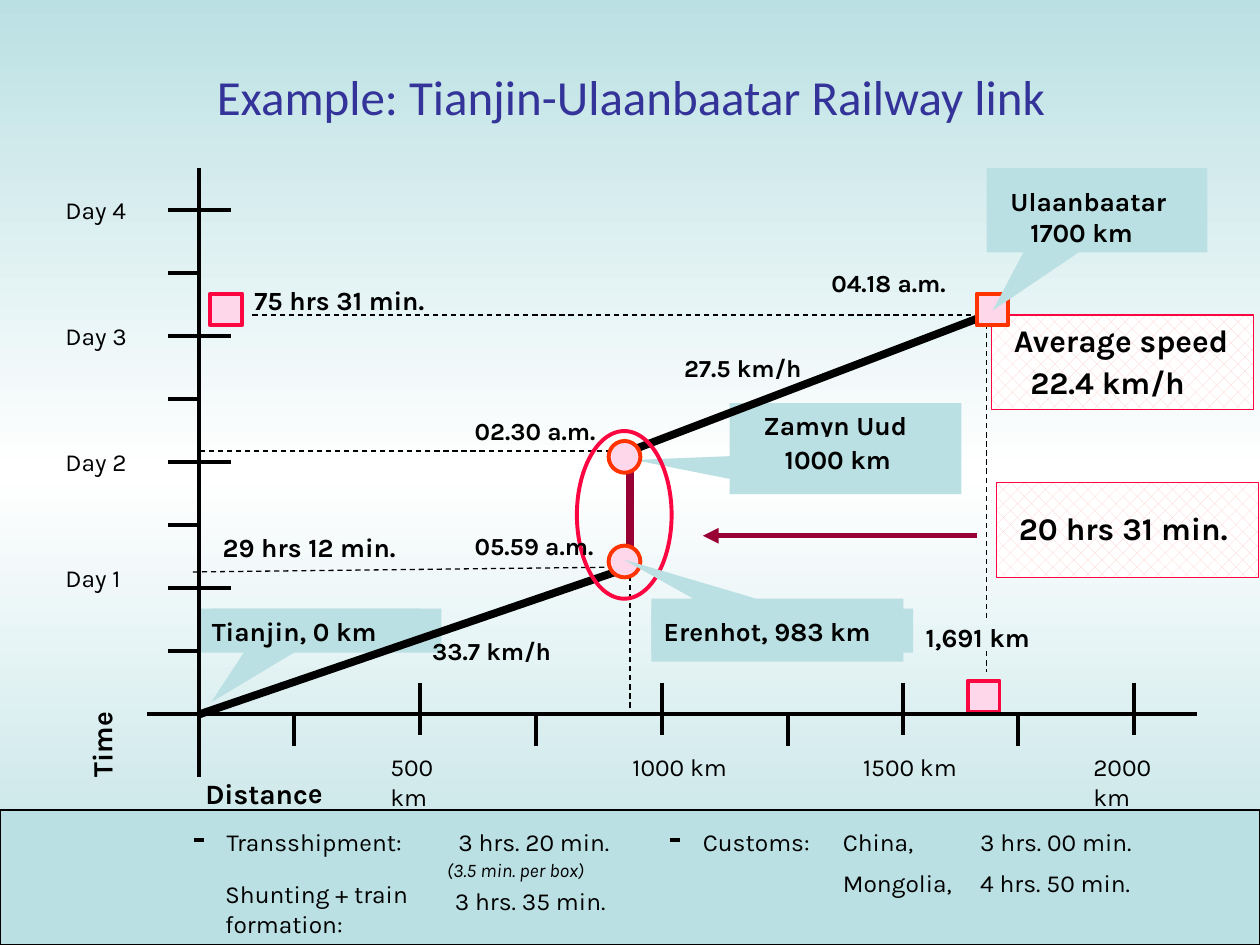
import copy
import dataclasses

import pptx
import pptx.dml.color
import pptx.enum.dml
import pptx.enum.shapes
import pptx.enum.text
import pptx.oxml
import pptx.oxml.ns
import pptx.util

SHAPES = pptx.enum.shapes.MSO_SHAPE


@dataclasses.dataclass(frozen=True)
class Theme:
    """Colours, fonts and type sizes of the slide."""
    ink: str = "000000"
    paper: str = "FFFFFF"
    panel: str = "BBE0E3"
    title: str = "333399"
    border: str = "990033"
    accent: str = "FC0641"
    station: str = "FF3300"
    marker: str = "FFD7EB"
    hatch: str = "FFCCCC"
    heading_font: str = "Calibri"
    body_font: str = "Karla"
    heading: float = 28
    result: float = 18
    axis: float = 16
    place: float = 15
    body: float = 14
    note: float = 11


THEME = Theme()


def colour(code):
    """Return the colour object for a hex code."""
    return pptx.dml.color.RGBColor.from_string(code)


def style_text(shape, size, ink, font, bold=False, italic=False):
    """Format every run of a shape."""
    for para in shape.text_frame.paragraphs:
        for span in para.runs:
            span.font.name = font
            span.font.size = pptx.util.Pt(size)
            span.font.bold = bold
            span.font.italic = italic
            span.font.color.rgb = colour(ink)


@dataclasses.dataclass
class Region:
    """A box on the page whose parts are placed in cm from its top left."""
    page: object
    left: float
    top: float

    def spot(self, x, y):
        """Return the page position of a point in the region."""
        return pptx.util.Cm(self.left + x), pptx.util.Cm(self.top + y)

    def text(self, words, x, y, width, size=THEME.body, height=0.89,
             bold=False, italic=False, fill=None, turn=0):
        """Add a wrapped label."""
        box = self.page.shapes.add_textbox(
            *self.spot(x, y), pptx.util.Cm(width), pptx.util.Cm(height))
        box.rotation = turn
        box.text_frame.word_wrap = True
        box.text_frame.text = words
        style_text(box, size, THEME.ink, THEME.body_font, bold, italic)
        if fill:
            box.fill.solid()
            box.fill.fore_color.rgb = colour(fill)
        return box

    def shape(self, kind, x, y, width, height, fill=None, line=None, weight=2.25):
        """Add a flat preset shape."""
        shape = self.page.shapes.add_shape(
            kind, *self.spot(x, y), pptx.util.Cm(width), pptx.util.Cm(height))
        shape.shadow.inherit = False
        if fill:
            shape.fill.solid()
            shape.fill.fore_color.rgb = colour(fill)
        else:
            shape.fill.background()
        if line:
            shape.line.color.rgb = colour(line)
            shape.line.width = pptx.util.Pt(weight)
        else:
            shape.line.fill.background()
        return shape

    def line(self, start, end, weight=2.25, ink=THEME.ink, dashed=False):
        """Add a straight line without a shadow."""
        line = self.page.shapes.add_connector(
            pptx.enum.shapes.MSO_CONNECTOR.STRAIGHT, *self.spot(*start), *self.spot(*end))
        line.line.color.rgb = colour(ink)
        line.line.width = pptx.util.Pt(weight)
        if dashed:
            line.line.dash_style = pptx.enum.dml.MSO_LINE.DASH
        pptx.oxml.ns.qn("a:effectLst")
        line._element.spPr.append(pptx.oxml.parse_xml(
            f'<a:effectLst {pptx.oxml.ns.nsdecls("a")}/>'))
        return line

    def callout(self, frame, pointer, labels, fill=None):
        """Add a place callout with its label lines."""
        shape = self.shape(SHAPES.RECTANGULAR_CALLOUT, *frame, fill=THEME.panel)
        shape.adjustments[0], shape.adjustments[1] = pointer
        for words, x, y, width in labels:
            self.text(words, x, y, width, THEME.place, bold=True, fill=fill)

    def result(self, x, y, labels):
        """Add a hatched result panel with its label lines."""
        panel = self.shape(SHAPES.RECTANGLE, x, y, 5.28, 1.91, line=THEME.accent, weight=0.75)
        panel.fill.patterned()
        panel.fill.pattern = pptx.enum.dml.MSO_PATTERN.PERCENT_25
        panel.fill.fore_color.rgb = colour(THEME.hatch)
        panel.fill.back_color.rgb = colour(THEME.paper)
        for words, dx, dy, width in labels:
            self.text(words, x + dx, y + dy, width, THEME.result, 1.02, bold=True)


def draw_background(page):
    """Fill the page with a vertical gradient that is white in the middle."""
    fill = page.background.fill
    fill.gradient()
    fill.gradient_angle = 270
    first, last = fill.gradient_stops
    first.color.rgb = colour(THEME.paper)
    stops = next(page._element.iter(pptx.oxml.ns.qn("a:gsLst")))
    middle = copy.deepcopy(stops[0])
    middle.set("pos", "50000")
    stops.insert(1, middle)
    first.color.rgb = last.color.rgb = colour(THEME.panel)


def draw_title(page, left, top, width, height):
    """Place and format the title placeholder."""
    title = page.shapes.title
    title.left, title.top = pptx.util.Cm(left), pptx.util.Cm(top)
    title.width, title.height = pptx.util.Cm(width), pptx.util.Cm(height)
    frame = title.text_frame
    frame.text = "Example: Tianjin-Ulaanbaatar Railway link"
    frame.auto_size = pptx.enum.text.MSO_AUTO_SIZE.NONE
    frame.vertical_anchor = pptx.enum.text.MSO_ANCHOR.MIDDLE
    frame.margin_left = frame.margin_right = 0
    frame.paragraphs[0].alignment = pptx.enum.text.PP_ALIGN.CENTER
    style_text(title, THEME.heading, THEME.title, THEME.heading_font)


def draw_axes(plot, base):
    """Draw the time and distance axes with ticks and names."""
    plot.line((-1.05, base), (20.11, base))
    plot.line((0, 0), (0, 12.28))
    for step in range(8):
        y = 0.85 + 1.27 * step
        plot.line((-0.64, y), (0 if step % 2 else 0.63, y))
    for day, y in zip((4, 3, 2, 1), (0.42, 2.96, 5.5, 7.84)):
        plot.text(f"Day {day}", -2.95, y, 3.1)
    for x in (1.9, 6.78, 11.86, 16.5):
        plot.line((x, base), (x, base + 0.64))
    ticks = ((500, 4.44, 3.6, 2.13), (1000, 9.32, 8.48, 2.41),
             (1500, 14.19, 13.13, 2.41), (2000, 18.84, 17.77, 2.41))
    for distance, x, label_x, width in ticks:
        plot.line((x, base - 0.63), (x, base + 0.41))
        plot.text(f"{distance} km", label_x, base + 0.64, width)
    plot.text("Distance", -0.13, 12.13, 4.45, THEME.axis, bold=True, turn=359.9)
    plot.text("Time", -3.12, 10.66, 2.54, THEME.axis, 1.19, bold=True, turn=269.6)


def draw_journey(plot, base):
    """Draw the route, its guides, stations and timings."""
    border_in, border_out, arrival = (8.68, 8.04), (8.68, 5.7), (15.87, 2.96)
    plot.callout((10.69, 4.74, 4.67, 1.83), (-0.913, 0.125),
                 (("Zamyn Uud", 11.12, 4.74, 4.17), ("1000 km", 11.55, 5.42, 3.12)), THEME.panel)
    plot.callout((0.22, 8.88, 4.24, 0.84), (-0.496, 1.75),
                 (("Tianjin, 0 km", 0, 8.88, 4.88),), THEME.panel)
    guides = (((8.48, 5.7), (0, 5.7)), ((-0.13, 8.14), border_in), (border_in, (8.68, 10.94)),
              (arrival, (15.87, 9.11)), ((15.87, 9.74), (15.87, 10.15)), ((1.07, 2.96), arrival))
    for start, end in guides:
        plot.line(start, end, 0.75, dashed=True)
    plot.line((0, base), border_in, 4.5)
    plot.line(border_out, arrival, 4.5)
    plot.line(border_in, border_out, 4.5, THEME.border)
    plot.shape(SHAPES.OVAL, 7.61, 5.3, 1.91, 3.38, line=THEME.accent)
    markers = ((SHAPES.OVAL, 8.25, 5.5, THEME.station), (SHAPES.OVAL, 8.25, 7.61, THEME.station),
               (SHAPES.RECTANGLE, 15.49, 10.33, THEME.accent),
               (SHAPES.RECTANGLE, 0.22, 2.53, THEME.accent))
    for kind, x, y, line in markers:
        plot.shape(kind, x, y, 0.64, 0.64, THEME.marker, line)
    plot.result(15.97, 2.96, (("Average speed", 0.2, 0, 5.21), ("22.4 km/h", 0.53, 0.84, 3.86)))
    plot.result(16.07, 6.34, (("20 hrs 31 min.", 0.2, 0.4, 5.11),))
    plot.shape(SHAPES.RECTANGLE, 15.67, 2.53, 0.64, 0.64, THEME.marker, THEME.station)
    arrow = plot.line((15.67, 7.41), (10.15, 7.41), 3, THEME.border)
    arrow.line._get_or_add_ln().append(pptx.oxml.parse_xml(
        f'<a:tailEnd {pptx.oxml.ns.nsdecls("a")} type="triangle"/>'))
    plot.callout((9.11, 8.68, 5.08, 1.27), (-0.611, -1.125),
                 (("Erenhot, 983 km", 9.11, 8.88, 5.28),), THEME.panel)
    plot.callout((15.87, 0, 4.45, 1.7), (-0.472, 1.188),
                 (("Ulaanbaatar", 16.1, 0.22, 4.24), ("1700 km", 16.5, 0.85, 3.18)))
    for words, x, y in (("75 hrs 31 min.", 0.86, 2.22), ("29 hrs 12 min.", 0.22, 7.2),
                        ("1,691 km", 14.39, 9.01)):
        plot.text(words, x, y, 4.32 if "hrs" in words else 3, THEME.place, bold=True)
    for words, x, y in (("33.7 km/h", 4.44, 9.31), ("27.5 km/h", 9.52, 3.6),
                        ("04.18 a.m.", 12.49, 1.89), ("02.30 a.m.", 5.3, 4.87),
                        ("05.59 a.m.", 5.3, 7.2)):
        plot.text(words, x, y, 3.15, height=0.84, bold=True)


def draw_border_times(footer, width, height):
    """Draw the panel that breaks down the time at the border."""
    footer.shape(SHAPES.RECTANGLE, 0, 0, width, height, THEME.panel, THEME.ink, 0.75)
    for x in (3.91, 13.5):
        footer.line((x, 0.61), (x + 0.21, 0.61))
    entries = (("Transshipment:", 4.32, 0.21, 6.78), ("3 hrs. 20 min.", 8.99, 0.21, 5.72),
               ("Shunting + train formation:", 4.29, 1.27, 6.15),
               ("3 hrs. 35 min.", 8.92, 1.4, 5.92), ("Customs:", 13.92, 0.21, 3.38),
               ("China,", 16.74, 0.21, 2.34), ("3 hrs. 00 min.", 19.51, 0.21, 4.24),
               ("Mongolia,", 16.74, 1.04, 2.97), ("4 hrs. 50 min.", 19.51, 1.04, 4.24))
    for words, x, y, span_width in entries:
        footer.text(words, x, y, span_width, height=0.84)
    footer.text("(3.5 min. per box)", 8.76, 0.84, 4.24, THEME.note, 0.71, italic=True)


def main():
    """Build the deck and save it."""
    deck = pptx.Presentation()
    deck.slide_width, deck.slide_height = pptx.util.Cm(25.4), pptx.util.Cm(19.05)
    page = deck.slides.add_slide(deck.slide_layouts[5])
    draw_background(page)
    draw_title(page, 0.51, 0.76, 24.41, 2.36)
    draw_border_times(Region(page, 0, 16.33), 25.4, 2.72)
    plot = Region(page, 4.02, 3.39)
    draw_journey(plot, 11.01)
    draw_axes(plot, 11.01)
    deck.save("out.pptx")


if __name__ == "__main__":
    main()
